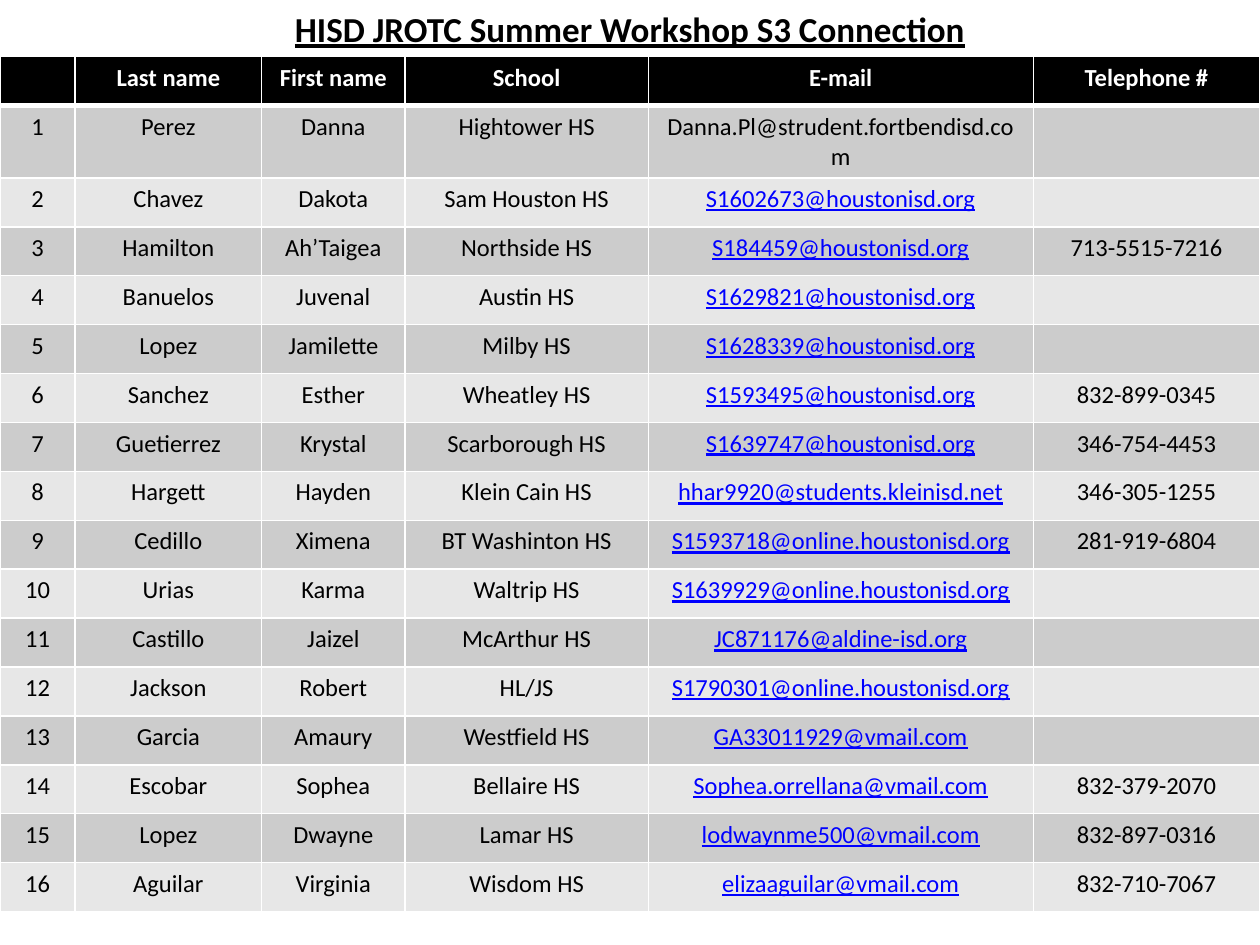
from typing import NamedTuple

from lxml.etree import SubElement
from pptx import Presentation
from pptx.dml.color import RGBColor
from pptx.enum.text import MSO_ANCHOR, MSO_AUTO_SIZE, PP_ALIGN
from pptx.oxml.ns import qn
from pptx.util import Pt

BLACK = RGBColor(0x00, 0x00, 0x00)
WHITE = RGBColor(0xFF, 0xFF, 0xFF)
LINK_BLUE = RGBColor(0x00, 0x00, 0xFF)
DARK_BAND = RGBColor(0xCC, 0xCC, 0xCC)
LIGHT_BAND = RGBColor(0xE7, 0xE7, 0xE7)

FONT = "Calibri"
BODY_SIZE = 14
ROW_HEIGHT = 27.95
COLUMN_WIDTHS = (43, 106.5, 82, 139, 220, 129.5)
HEADINGS = ("", "Last name", "First name", "School", "E-mail", "Telephone #")


class Cadet(NamedTuple):
    last_name: str
    first_name: str
    school: str
    email: str
    telephone: str = ""
    linked: bool = True


CADETS = (
    Cadet("Perez", "Danna", "Hightower HS", "Danna.Pl@strudent.fortbendisd.com", linked=False),
    Cadet("Chavez", "Dakota", "Sam Houston HS", "S1602673@houstonisd.org"),
    Cadet("Hamilton", "Ah’Taigea", "Northside HS", "S184459@houstonisd.org", "713-5515-7216"),
    Cadet("Banuelos", "Juvenal", "Austin HS", "S1629821@houstonisd.org"),
    Cadet("Lopez", "Jamilette", "Milby HS", "S1628339@houstonisd.org"),
    Cadet("Sanchez", "Esther", "Wheatley HS", "S1593495@houstonisd.org", "832-899-0345"),
    Cadet("Guetierrez", "Krystal", "Scarborough HS", "S1639747@houstonisd.org", "346-754-4453"),
    Cadet("Hargett", "Hayden", "Klein Cain HS", "hhar9920@students.kleinisd.net", "346-305-1255"),
    Cadet("Cedillo", "Ximena", "BT Washinton HS", "S1593718@online.houstonisd.org", "281-919-6804"),
    Cadet("Urias", "Karma", "Waltrip HS", "S1639929@online.houstonisd.org"),
    Cadet("Castillo", "Jaizel", "McArthur HS", "JC871176@aldine-isd.org"),
    Cadet("Jackson", "Robert", "HL/JS", "S1790301@online.houstonisd.org"),
    Cadet("Garcia", "Amaury", "Westfield HS", "GA33011929@vmail.com"),
    Cadet("Escobar", "Sophea", "Bellaire HS", "Sophea.orrellana@vmail.com", "832-379-2070"),
    Cadet("Lopez", "Dwayne", "Lamar HS", "lodwaynme500@vmail.com", "832-897-0316"),
    Cadet("Aguilar", "Virginia", "Wisdom HS", "elizaaguilar@vmail.com", "832-710-7067"),
)


def write_text(frame, text: str, *, size: float = BODY_SIZE, color: RGBColor = BLACK,
               bold: bool = False, underline: bool = False) -> None:
    paragraph = frame.paragraphs[0]
    paragraph.alignment = PP_ALIGN.CENTER
    if not text:
        # An empty cell keeps the body size, so its row does not grow
        SubElement(paragraph._p, qn("a:endParaRPr"), sz=str(size * 100))
        return
    run = paragraph.add_run()
    run.text = text
    font = run.font
    font.name, font.size, font.bold, font.underline = FONT, Pt(size), bold, underline
    font.color.rgb = color


def style_cell(cell, fill: RGBColor, *, top: float = 1, bottom: float = 1) -> None:
    # Borders come before the fill in the cell properties
    properties = cell._tc.get_or_add_tcPr()
    for side, width in (("L", 1), ("R", 1), ("T", top), ("B", bottom)):
        border = SubElement(properties, qn(f"a:ln{side}"), w=str(Pt(width)))
        SubElement(SubElement(border, qn("a:solidFill")), qn("a:srgbClr"), val=str(WHITE))
    cell.fill.solid()
    cell.fill.fore_color.rgb = fill


def add_title(slide, text: str) -> None:
    title = slide.shapes.title
    title.left, title.top, title.width, title.height = Pt(36), Pt(0), Pt(648), Pt(32.4)
    frame = title.text_frame
    frame.auto_size = MSO_AUTO_SIZE.NONE
    frame.vertical_anchor = MSO_ANCHOR.MIDDLE
    write_text(frame, text, size=20, bold=True, underline=True)


def add_roster(slide, cadets: tuple[Cadet, ...]) -> None:
    row_count = len(cadets) + 1
    roster = slide.shapes.add_table(row_count, len(HEADINGS), Pt(0), Pt(32.4),
                                    Pt(720), Pt(row_count * ROW_HEIGHT)).table
    for column, width in zip(roster.columns, COLUMN_WIDTHS):
        column.width = Pt(width)
    for row in roster.rows:
        row.height = Pt(ROW_HEIGHT)

    # Heading row
    for column, heading in enumerate(HEADINGS):
        cell = roster.cell(0, column)
        style_cell(cell, BLACK, bottom=3)
        write_text(cell.text_frame, heading, color=WHITE, bold=True)

    # One banded row per cadet
    for number, cadet in enumerate(cadets, start=1):
        band = DARK_BAND if number % 2 else LIGHT_BAND
        values = (str(number), cadet.last_name, cadet.first_name,
                  cadet.school, cadet.email, cadet.telephone)
        for column, value in enumerate(values):
            cell = roster.cell(number, column)
            style_cell(cell, band, top=3 if number == 1 else 1)
            is_link = cadet.linked and HEADINGS[column] == "E-mail"
            write_text(cell.text_frame, value, underline=is_link,
                       color=LINK_BLUE if is_link else BLACK)


def main() -> None:
    presentation = Presentation()
    presentation.slide_width, presentation.slide_height = Pt(720), Pt(540)
    title_only = presentation.slide_layouts[5]
    slide = presentation.slides.add_slide(title_only)
    add_title(slide, "HISD JROTC Summer Workshop S3 Connection")
    add_roster(slide, CADETS)
    presentation.save("out.pptx")


if __name__ == "__main__":
    main()
